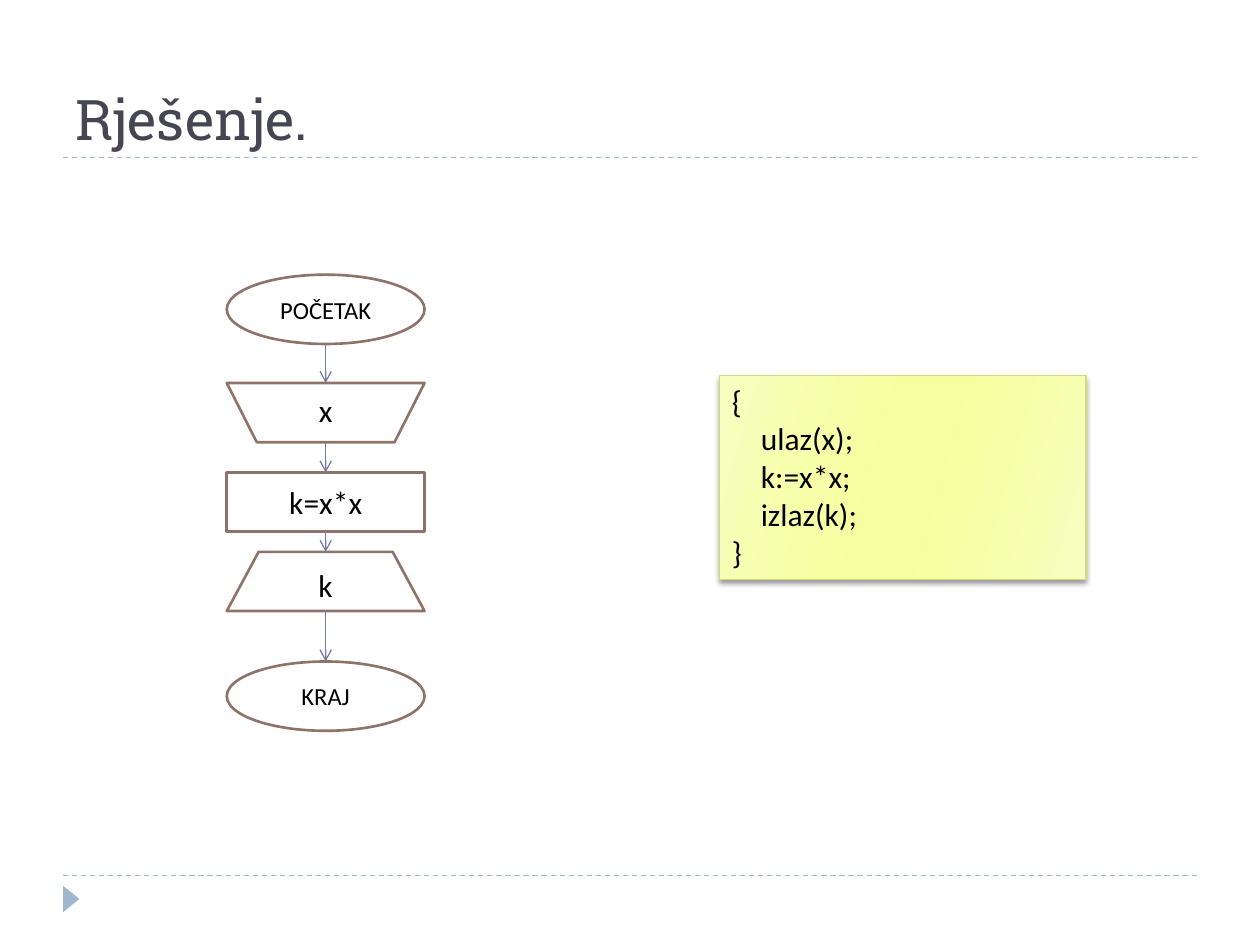
from lxml import etree
from pptx import Presentation
from pptx.dml.color import RGBColor
from pptx.enum.dml import MSO_LINE
from pptx.enum.shapes import MSO_CONNECTOR, MSO_SHAPE
from pptx.enum.text import MSO_ANCHOR, PP_ALIGN
from pptx.oxml import parse_xml
from pptx.oxml.ns import nsdecls, qn
from pptx.util import Inches, Pt

ELLIPSE = MSO_SHAPE.OVAL
TRAPEZOID = MSO_SHAPE.TRAPEZOID
RECTANGLE = MSO_SHAPE.RECTANGLE
TRIANGLE = MSO_SHAPE.ISOSCELES_TRIANGLE
STRAIGHT = MSO_CONNECTOR.STRAIGHT
TOP_SITE, BOTTOM_SITE = 0, 2

COLORS = {
    "rule": "9FB8CD",
    "title": "464653",
    "outline": "8E736A",
    "arrow": "727CA3",
    "white": "FFFFFF",
    "black": "000000",
    "code_line": "D2DA7A",
}
CODE_GRADIENT = [(0, "F8FEC2"), (30, "F6FFA7"), (45, "F6FF9F"),
                 (55, "F6FF9F"), (73, "F6FFA7"), (100, "F8FEC2")]
CODE_ANGLE = 16

STEP_LEFT, STEP_WIDTH = 1.8, 1.57
# kind, text, top, height, text size, slant, upside down
STEPS = [
    (ELLIPSE, "POČETAK", 2.18, 0.55, 14, None, False),
    (TRAPEZOID, "x", 3.04, 0.47, 18, 0.507, True),
    (RECTANGLE, "k=x*x", 3.75, 0.47, 18, None, False),
    (TRAPEZOID, "k", 4.38, 0.47, 18, 0.539, False),
    (ELLIPSE, "KRAJ", 5.25, 0.55, 14, None, False),
]
# text, indent in inches
CODE = [("{", 0), ("ulaz(x);", 0.23), ("k:=x*x;", 0.23),
        ("izlaz(k);", 0.23), ("}", 0)]


def rgb(name):
    return RGBColor.from_string(COLORS[name])


def style_text(paragraph, size, color="black", font="Calibri"):
    for run in paragraph.runs:
        run.font.size = Pt(size)
        run.font.name = font
        run.font.color.rgb = rgb(color)


def add_line(slide, start, end, color):
    line = slide.shapes.add_connector(STRAIGHT, *map(Inches, start + end))
    line.line.color.rgb = rgb(color)
    line.line.width = Pt(0.75)
    etree.SubElement(line._element.spPr, qn("a:effectLst"))
    return line


def add_rule(slide, y):
    add_line(slide, (0.5, y), (9.5, y), "rule").line.dash_style = MSO_LINE.DASH


def add_corner_mark(slide):
    mark = slide.shapes.add_shape(
        TRIANGLE, Inches(0.46), Inches(7.07), Inches(0.21), Inches(0.13))
    mark.rotation = 90
    mark.shadow.inherit = False
    mark.fill.solid()
    mark.fill.fore_color.rgb = rgb("rule")
    mark.line.fill.background()


def add_title(slide, text):
    title = slide.shapes.add_textbox(
        Inches(0.5), Inches(0.17), Inches(9), Inches(1.08))
    frame = title.text_frame
    frame.word_wrap = True
    frame.vertical_anchor = MSO_ANCHOR.BOTTOM
    frame.text = text
    style_text(frame.paragraphs[0], 32, "title", "Roboto Slab")


def turn_upside_down(shape):
    """Flip the outline vertically and keep its text upright."""
    shape._element.spPr.find(qn("a:xfrm")).set("flipV", "1")
    shape.text_frame._txBody.bodyPr.set("rot", "10800000")


def add_step(slide, kind, text, top, height, size, slant, upside_down):
    step = slide.shapes.add_shape(
        kind, Inches(STEP_LEFT), Inches(top), Inches(STEP_WIDTH), Inches(height))
    if slant is not None:
        step.adjustments[0] = slant
    step.shadow.inherit = False
    step.fill.solid()
    step.fill.fore_color.rgb = rgb("white")
    step.line.color.rgb = rgb("outline")
    step.line.width = Pt(1.5)
    frame = step.text_frame
    frame.vertical_anchor = MSO_ANCHOR.MIDDLE
    frame.text = text
    frame.paragraphs[0].alignment = PP_ALIGN.CENTER
    style_text(frame.paragraphs[0], size)
    if upside_down:
        turn_upside_down(step)
    return step


def add_arrow(slide, upper, lower):
    center = STEP_LEFT + STEP_WIDTH / 2
    start = (center, (upper.top + upper.height).inches
             if hasattr(upper.top + upper.height, "inches")
             else (upper.top + upper.height) / Inches(1))
    arrow = add_line(slide, start, (center, lower.top / Inches(1)), "arrow")
    if upper.auto_shape_type == RECTANGLE:
        arrow.begin_connect(upper, BOTTOM_SITE)
    if lower.auto_shape_type == RECTANGLE:
        arrow.end_connect(lower, TOP_SITE)
    etree.SubElement(arrow.line._get_or_add_ln(), qn("a:tailEnd"), type="arrow")


def add_flowchart(slide):
    steps = [add_step(slide, *step) for step in STEPS]
    for upper, lower in zip(steps, steps[1:]):
        add_arrow(slide, upper, lower)


def paint_code_box(box):
    """Give the box its slanted gradient and the soft shadow below it."""
    stops = "".join(
        f'<a:gs pos="{position * 1000}"><a:srgbClr val="{color}"/></a:gs>'
        for position, color in CODE_GRADIENT)
    gradient = parse_xml(
        f'<a:gradFill {nsdecls("a")} rotWithShape="1"><a:gsLst>{stops}</a:gsLst>'
        f'<a:lin ang="{CODE_ANGLE * 60000}" scaled="0"/></a:gradFill>')
    shadow = parse_xml(
        f'<a:effectLst {nsdecls("a")}><a:outerShdw blurRad="{Pt(3)}" '
        f'dist="{Pt(2)}" dir="5400000" rotWithShape="0">'
        f'<a:srgbClr val="{COLORS["black"]}"><a:alpha val="40000"/></a:srgbClr>'
        '</a:outerShdw></a:effectLst>')
    box.line.color.rgb = rgb("code_line")
    box.line.width = Pt(0.75)
    properties = box._element.spPr
    properties.find(qn("a:prstGeom")).addnext(gradient)
    properties.append(shadow)


def add_code_box(slide):
    box = slide.shapes.add_shape(
        RECTANGLE, Inches(5.71), Inches(2.98), Inches(2.91), Inches(1.62))
    paint_code_box(box)
    frame = box.text_frame
    frame.word_wrap = True
    frame.vertical_anchor = MSO_ANCHOR.TOP
    frame.text = "\n".join(text for text, _ in CODE)
    for paragraph, (_, indent) in zip(frame.paragraphs, CODE):
        paragraph.alignment = PP_ALIGN.LEFT
        paragraph._p.get_or_add_pPr().set("marL", str(Inches(indent)))
        style_text(paragraph, 18)


def main():
    presentation = Presentation()
    presentation.slide_width = Inches(10)
    presentation.slide_height = Inches(7.5)
    slide = presentation.slides.add_slide(presentation.slide_layouts[6])
    for y in (6.95, 1.25):
        add_rule(slide, y)
    add_corner_mark(slide)
    add_title(slide, "Rješenje.")
    add_flowchart(slide)
    add_code_box(slide)
    presentation.save("out.pptx")


if __name__ == "__main__":
    main()
